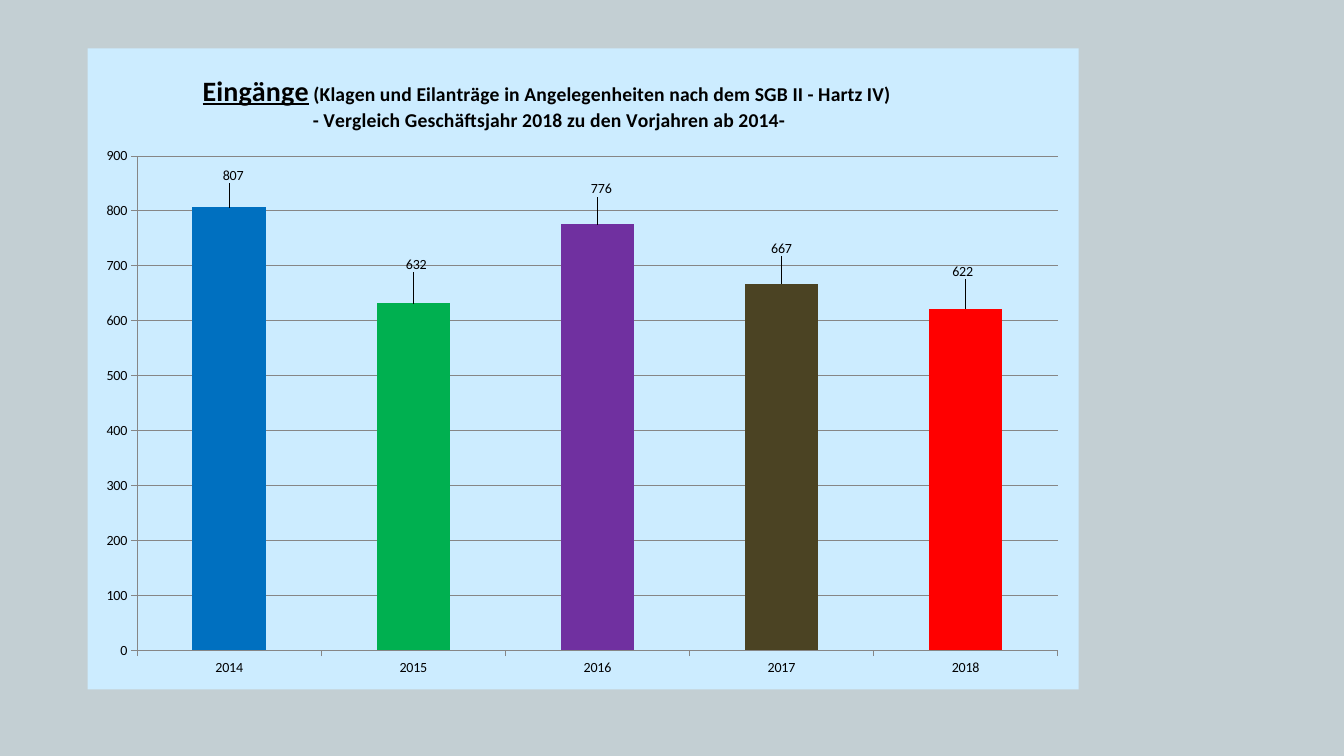
from lxml import etree
from pptx import Presentation
from pptx.chart.data import CategoryChartData
from pptx.dml.color import RGBColor
from pptx.enum.chart import XL_CHART_TYPE, XL_LABEL_POSITION, XL_TICK_MARK
from pptx.oxml import parse_xml
from pptx.oxml.ns import nsdecls, qn
from pptx.util import Pt

COLUMN_CLUSTERED = XL_CHART_TYPE.COLUMN_CLUSTERED
OUTSIDE_END = XL_LABEL_POSITION.OUTSIDE_END
TICK_OUTSIDE = XL_TICK_MARK.OUTSIDE

# Content: year, value, bar colour, label shift as a share of the chart size
SERIES_NAME = "Eingänge"
YEARS = [
    ("2014", 807, "0070C0", (0.004, -0.03)),
    ("2015", 632, "00B050", (0.003, -0.042)),
    ("2016", 776, "7030A0", (0.004, -0.036)),
    ("2017", 667, "4B4323", (0, -0.037)),
    ("2018", 622, "FF0000", (-0.003, -0.039)),
]
TITLE_WORD = "Eingänge"
TITLE_REST = " (Klagen und Eilanträge in Angelegenheiten nach dem SGB II - Hartz IV) "
TITLE_SECOND_LINE = "- Vergleich Geschäftsjahr 2018 zu den Vorjahren ab 2014-"

THEME = {
    "font": "Calibri",
    "background": "C3CFD3",
    "panel": "CCECFF",
    "text": "000000",
    "line": "868686",
    "title_size": 20,
    "subtitle_size": 14,
    "chart_size": 10,
}

# Geometry in points; inner layouts as shares of the chart
SLIDE_SIZE = (960, 540)
CHART_BOX = (62.64, 34.56, 707.76, 457.92)
PLOT_LAYOUT = {"x": 0.05, "y": 0.168, "w": 0.929, "h": 0.771}
TITLE_LAYOUT = {"x": 0.113, "y": 0.032}


def color(name):
    return RGBColor.from_string(THEME[name])


def format_font(font, size, bold=False, underline=False):
    font.name = THEME["font"]
    font.size = Pt(size)
    font.bold = bold
    font.underline = underline
    font.color.rgb = color("text")


def add_text(paragraph, text, **font_format):
    run = paragraph.add_run()
    run.text = text
    format_font(run.font, **font_format)


def set_layout(element, index, shares, inner=False, absolute=True):
    """Give a chart part a manual layout, placed at the given child index."""
    for old_layout in element.findall(qn("c:layout")):
        element.remove(old_layout)
    layout = parse_xml(f"<c:layout {nsdecls('c')}><c:manualLayout/></c:layout>")
    settings = [("layoutTarget", "inner")] if inner else []
    if absolute:
        settings += [("xMode", "edge"), ("yMode", "edge")]
    for tag, value in settings + list(shares.items()):
        etree.SubElement(layout[0], qn(f"c:{tag}")).set("val", str(value))
    element.insert(index, layout)


def add_title(chart):
    chart.has_title = True
    text_frame = chart.chart_title.text_frame
    first_line = text_frame.paragraphs[0]
    add_text(first_line, TITLE_WORD, size=THEME["title_size"], bold=True, underline=True)
    add_text(first_line, TITLE_REST, size=THEME["subtitle_size"], bold=True)
    second_line = text_frame.add_paragraph()
    add_text(second_line, TITLE_SECOND_LINE, size=THEME["subtitle_size"], bold=True)
    set_layout(chart.chart_title._element, 1, TITLE_LAYOUT)


def format_axes(chart):
    value_axis = chart.value_axis
    value_axis.minimum_scale, value_axis.maximum_scale = 0, 900
    value_axis.major_unit = 100
    value_axis.has_major_gridlines = True
    value_axis.major_gridlines.format.line.color.rgb = color("line")
    for axis in (chart.category_axis, value_axis):
        axis.major_tick_mark = TICK_OUTSIDE
        axis.format.line.color.rgb = color("line")
        format_font(axis.tick_labels.font, THEME["chart_size"])


def format_bars(plot):
    plot.gap_width = 150
    plot.vary_by_categories = False
    series = plot.series[0]
    series.format.fill.solid()
    series.format.fill.fore_color.rgb = RGBColor.from_string(YEARS[0][2])
    series.data_labels.show_value = True
    format_font(series.data_labels.font, THEME["chart_size"])
    for index, (_, _, bar_color, _) in enumerate(YEARS):
        point = series.points[index]
        point.format.fill.solid()
        point.format.fill.fore_color.rgb = RGBColor.from_string(bar_color)
        point.data_label.position = OUTSIDE_END
    labels = series._element.iter(qn("c:dLbl"))
    for label, (_, _, _, (x, y)) in zip(labels, YEARS):
        set_layout(label, 1, {"x": x, "y": y}, absolute=False)


def add_intake_chart(slide):
    chart_data = CategoryChartData()
    chart_data.categories = [year for year, *_ in YEARS]
    chart_data.add_series(SERIES_NAME, [value for _, value, *_ in YEARS])
    box = [Pt(length) for length in CHART_BOX]
    chart = slide.shapes.add_chart(COLUMN_CLUSTERED, *box, chart_data).chart
    chart.has_legend = False
    format_font(chart.font, THEME["chart_size"])
    add_title(chart)
    format_axes(chart)
    format_bars(chart.plots[0])

    # Plot position and panel fill
    chart_space = chart._chartSpace
    set_layout(chart_space.find(".//" + qn("c:plotArea")), 0, PLOT_LAYOUT, inner=True)
    panel = parse_xml(
        f"<c:spPr {nsdecls('c', 'a')}><a:solidFill><a:srgbClr val=\"{THEME['panel']}\"/>"
        "</a:solidFill><a:ln><a:noFill/></a:ln></c:spPr>"
    )
    chart_space.find(qn("c:txPr")).addprevious(panel)


def main():
    presentation = Presentation()
    presentation.slide_width, presentation.slide_height = map(Pt, SLIDE_SIZE)
    slide = presentation.slides.add_slide(presentation.slide_layouts[6])
    slide.background.fill.solid()
    slide.background.fill.fore_color.rgb = color("background")
    add_intake_chart(slide)
    presentation.save("out.pptx")


if __name__ == "__main__":
    main()
